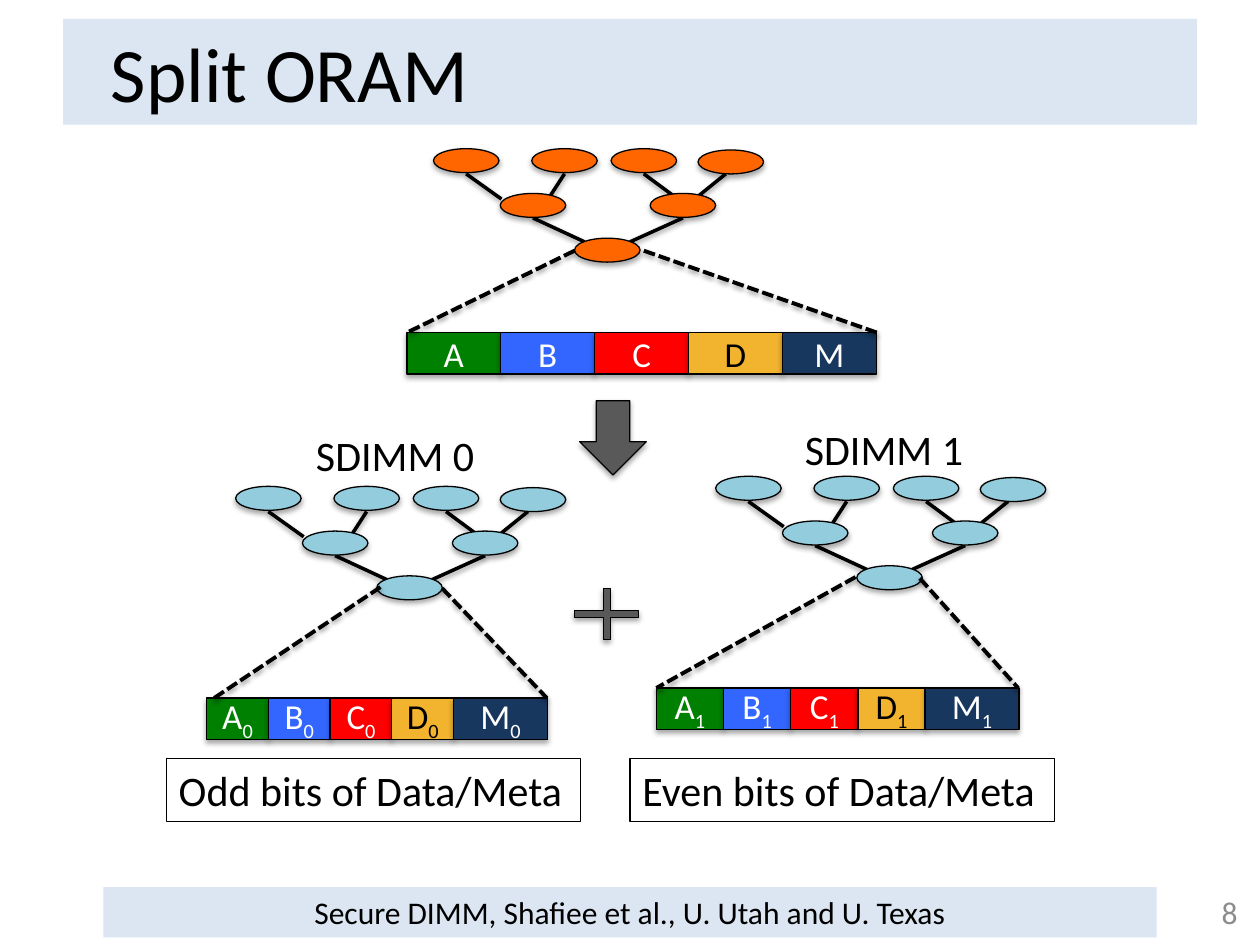
"""Build the Split ORAM slide: one bucket tree divided over two SDIMMs."""
from dataclasses import dataclass

import lxml.etree
import pptx
import pptx.dml.color
import pptx.enum.dml
import pptx.enum.shapes
import pptx.enum.text
import pptx.oxml.ns
import pptx.util

COLUMNS, ROWS = 100, 75
CELL = pptx.util.Inches(0.1)
FONT = "Calibri"
BLACK, WHITE, BAND, GREY = "000000", "FFFFFF", "DCE6F2", "595959"
PRESET = pptx.enum.shapes.MSO_SHAPE
ALIGN = pptx.enum.text.PP_ALIGN
ANCHOR = pptx.enum.text.MSO_ANCHOR

NODE_SIZE = (5.2, 1.9)
NODES = [(0, 0), (7.8, 0), (14.1, 0), (21, 0.1), (5.3, 3.55), (17.2, 3.55), (11.2, 7.1)]
BRANCHES = [(15.6, 7.4, 19.8, 5.5), (12, 7.4, 7.9, 5.5), (9.3, 3.7, 10.4, 2),
            (5.4, 4, 2.6, 2), (21.1, 3.7, 23.2, 2), (19.4, 4, 16.7, 2)]
FIELDS = [("A", "008000", WHITE), ("B", "3366FF", WHITE), ("C", "FF0000", WHITE),
          ("D", "F2B32E", BLACK), ("M", "17375E", WHITE)]
FIELD_HEIGHT = 3.3
META_WIDTH = 7.45


@dataclass
class Bucket:
    """A tree of nodes, its root magnified into a strip of fields."""
    color: str
    tree: tuple[float, float]
    strip: tuple[float, float]
    data_width: float
    guides: list[tuple[float, float, float, float]]
    subscript: str = ""


@dataclass
class Caption:
    """A line of text in a plain or outlined box."""
    text: str
    box: tuple[float, float, float, float]
    outlined: bool = False


BUCKETS = [
    Bucket("FF6600", (34.4, 11.8), (32.3, 26.4), 7.45,
           [(45.6, 19.9, 32.3, 26.4), (51.1, 19.9, 69.6, 26.4)]),
    Bucket("93CDDD", (18.7, 38.6), (16.4, 55.4), 4.9,
           [(30.2, 46.6, 17, 55.4), (35.1, 46.7, 43.4, 55.4)], "0"),
    Bucket("93CDDD", (56.8, 37.8), (52.1, 54.6), 5.33,
           [(67.9, 45.8, 52.1, 54.6), (73, 45.9, 80.8, 54.6)], "1"),
]
CAPTIONS = [
    Caption("SDIMM 0", (24.1, 33.6, 15, 5)),
    Caption("SDIMM 1", (62.9, 33.1, 15, 5)),
    Caption("Odd bits of Data/Meta", (13.2, 60.2, 32.9, 5), True),
    Caption("Even bits of Data/Meta", (50, 60.2, 33.7, 5), True),
]


def rgb(color: str) -> pptx.dml.color.RGBColor:
    """Turn a hex string into a colour."""
    return pptx.dml.color.RGBColor.from_string(color)


def cells(*counts: float) -> list[int]:
    """Turn counts of grid columns or rows into lengths."""
    return [round(count * CELL) for count in counts]


def cast_shadow(part, opacity: int, distance: float) -> None:
    """Give a shape or connector a soft shadow below it."""
    qn = pptx.oxml.ns.qn
    effects = lxml.etree.SubElement(part._element.spPr, qn("a:effectLst"))
    shadow = lxml.etree.SubElement(
        effects, qn("a:outerShdw"), blurRad=str(pptx.util.Pt(3.1)),
        dist=str(pptx.util.Pt(distance)), dir="5400000", rotWithShape="0")
    tone = lxml.etree.SubElement(shadow, qn("a:srgbClr"), val=BLACK)
    lxml.etree.SubElement(tone, qn("a:alpha"), val=str(opacity * 1000))


def add_run(paragraph, text: str, size: float, color: str, subscript: bool = False) -> None:
    """Add one formatted run of text."""
    run = paragraph.add_run()
    run.text = text
    run.font.size, run.font.name = pptx.util.Pt(size), FONT
    run.font.color.rgb = rgb(color)
    if subscript:
        run.font._element.set("baseline", "-25000")


def write(part, text: str, size: float, color: str = BLACK, align=ALIGN.LEFT,
          anchor=ANCHOR.TOP, wrap: bool = True):
    """Write a first run into a shape and return its paragraph."""
    frame = part.text_frame
    frame.word_wrap, frame.vertical_anchor = wrap, anchor
    paragraph = frame.paragraphs[0]
    paragraph.alignment = align
    add_run(paragraph, text, size, color)
    return paragraph


def draw_shape(slide, preset, box, fill: str, shadow: bool = True, rotation: float = 0):
    """Draw a filled preset shape, outlined when it casts a shadow."""
    shape = slide.shapes.add_shape(preset, *cells(*box))
    shape.rotation = rotation
    shape.fill.solid()
    shape.fill.fore_color.rgb = rgb(fill)
    if shadow:
        shape.line.color.rgb = rgb(BLACK)
        shape.line.width = pptx.util.Pt(0.75)
        cast_shadow(shape, 35, 1.8)
    else:
        shape.line.fill.background()
        shape.shadow.inherit = False
    return shape


def draw_line(slide, ends, width: float, dashed: bool = False) -> None:
    """Draw a straight black line between two grid points."""
    line = slide.shapes.add_connector(pptx.enum.shapes.MSO_CONNECTOR.STRAIGHT, *cells(*ends))
    line.line.color.rgb = rgb(BLACK)
    line.line.width = pptx.util.Pt(width)
    if dashed:
        line.line.dash_style = pptx.enum.dml.MSO_LINE.SQUARE_DOT
    cast_shadow(line, 38, 1.6)


def draw_bucket(slide, bucket: Bucket) -> None:
    """Draw the tree, the strip of fields and the dashed guides."""
    x, y = bucket.tree
    for x1, y1, x2, y2 in BRANCHES:
        draw_line(slide, (x + x1, y + y1, x + x2, y + y2), 2)
    for dx, dy in NODES:
        draw_shape(slide, PRESET.OVAL, (x + dx, y + dy, *NODE_SIZE), bucket.color)
    left, top = bucket.strip
    for index, (letter, fill, ink) in enumerate(FIELDS):
        width = META_WIDTH if letter == "M" else bucket.data_width
        box = (left + index * bucket.data_width, top, width, FIELD_HEIGHT)
        field = draw_shape(slide, PRESET.RECTANGLE, box, fill)
        frame = field.text_frame
        frame.margin_left = frame.margin_right = 0
        paragraph = write(field, letter, 20, ink, ALIGN.CENTER, ANCHOR.MIDDLE)
        if bucket.subscript:
            add_run(paragraph, bucket.subscript, 20, ink, subscript=True)
    for ends in bucket.guides:
        draw_line(slide, ends, 2.25, dashed=True)


def draw_caption(slide, caption: Caption) -> None:
    """Draw a caption, with a thin outline if it has one."""
    label = slide.shapes.add_textbox(*cells(*caption.box))
    if caption.outlined:
        label.line.color.rgb = rgb(BLACK)
        label.line.width = pptx.util.Pt(0.75)
    write(label, caption.text, 24, wrap=caption.outlined)


def draw_title(slide, text: str) -> None:
    """Place the title on a pale band."""
    title = slide.shapes.title
    title.left, title.top, title.width, title.height = cells(5, 1.5, 90, 8.4)
    title.fill.solid()
    title.fill.fore_color.rgb = rgb(BAND)
    title.text_frame.auto_size = pptx.enum.text.MSO_AUTO_SIZE.NONE
    title.text_frame.margin_left = cells(3.8)[0]
    write(title, text, 44)


def main() -> None:
    """Build and save the slide."""
    deck = pptx.Presentation()
    deck.slide_width, deck.slide_height = cells(COLUMNS, ROWS)
    slide = deck.slides.add_slide(deck.slide_layouts[5])
    draw_title(slide, "Split ORAM")
    credit = draw_shape(slide, PRESET.RECTANGLE, (8.2, 70.4, 83.6, 4), BAND, shadow=False)
    write(credit, "Secure DIMM, Shafiee et al., U. Utah and U. Texas", 18, align=ALIGN.CENTER)
    page = slide.shapes.add_textbox(*cells(95, 70.4, 4.2, 4))
    write(page, "8", 18, "8C8C8C", ALIGN.RIGHT, ANCHOR.MIDDLE)
    for bucket in BUCKETS:
        draw_bucket(slide, bucket)
    draw_shape(slide, PRESET.RIGHT_ARROW, (45.7, 32.1, 5.9, 5.3), GREY, rotation=90)
    plus = draw_shape(slide, PRESET.MATH_PLUS, (44.7, 46, 6.9, 5.5), GREY)
    plus.adjustments[0] = 0.1
    for caption in CAPTIONS:
        draw_caption(slide, caption)
    deck.save("out.pptx")


if __name__ == "__main__":
    main()
